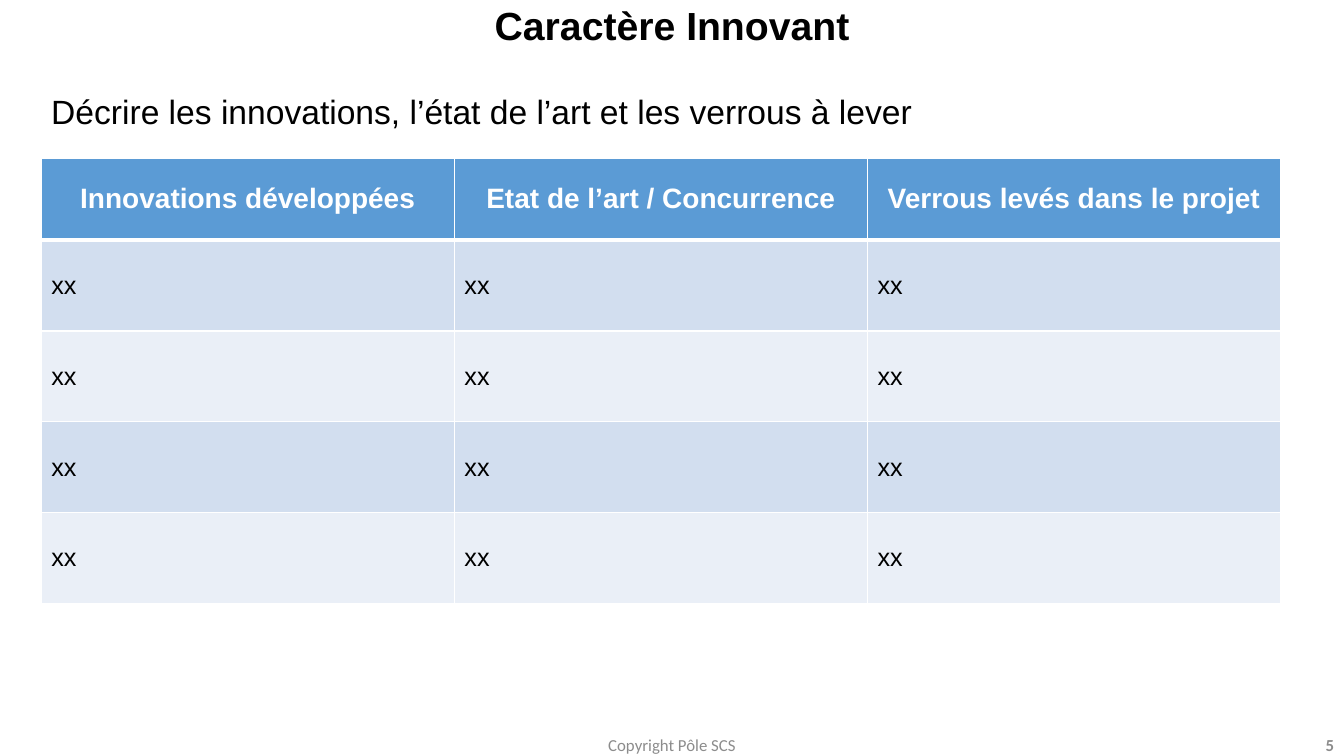
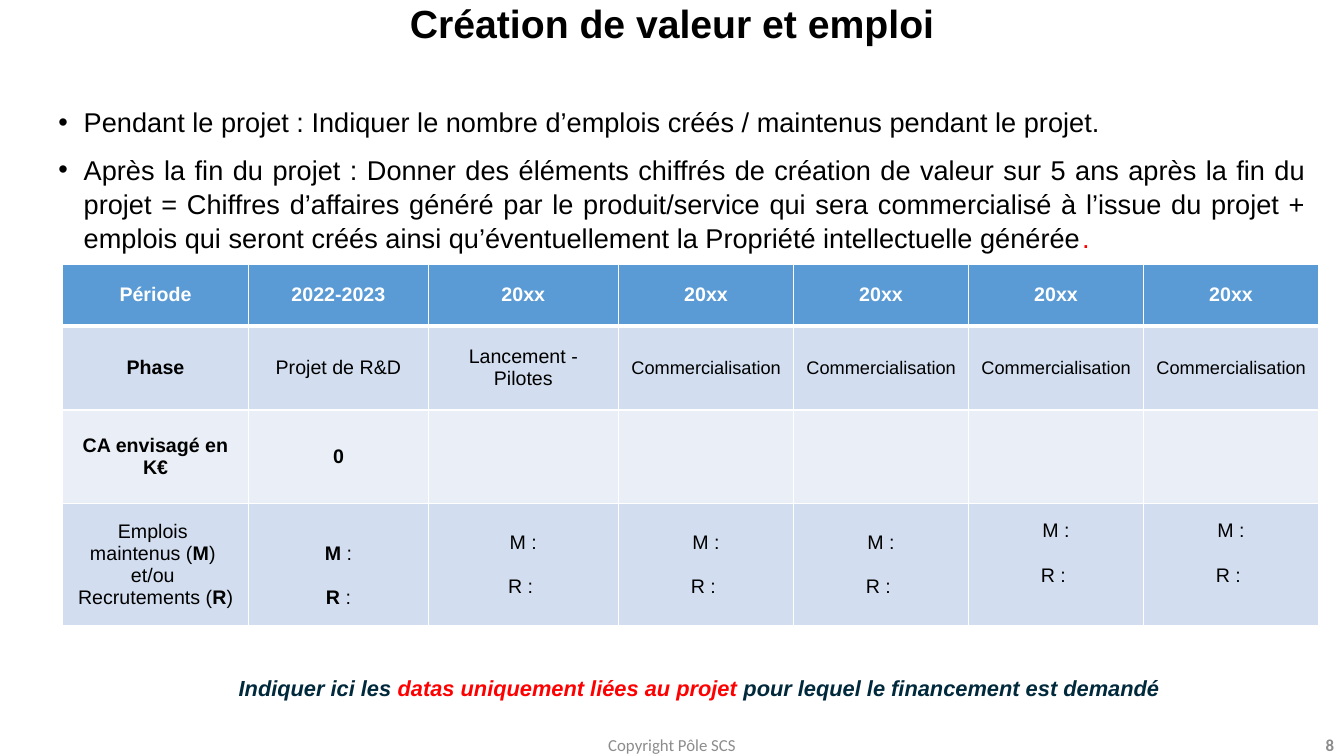
from lxml import etree
from pptx import Presentation
from pptx.dml.color import RGBColor
from pptx.enum.text import MSO_ANCHOR, PP_ALIGN
from pptx.oxml.ns import qn
from pptx.util import Cm, Pt

LEFT, CENTER, RIGHT, JUSTIFY = PP_ALIGN.LEFT, PP_ALIGN.CENTER, PP_ALIGN.RIGHT, PP_ALIGN.JUSTIFY
TOP, MIDDLE = MSO_ANCHOR.TOP, MSO_ANCHOR.MIDDLE

BLACK = RGBColor(0x00, 0x00, 0x00)
WHITE = RGBColor(0xFF, 0xFF, 0xFF)
GREY = RGBColor(0x8C, 0x8C, 0x8C)
RED = RGBColor(0xFF, 0x00, 0x00)
NAVY = RGBColor(0x00, 0x29, 0x3C)
HEADER_BLUE = RGBColor(0x5B, 0x9B, 0xD5)
BANDS = [RGBColor(0xD2, 0xDE, 0xEF), RGBColor(0xEA, 0xEF, 0xF7)]

SLIDE_WIDTH, SLIDE_HEIGHT = Cm(33.87), Cm(19.05)
FOOTER_TOP, FOOTER_HEIGHT = Cm(18.57), Cm(0.41)
TITLE_HEIGHT = Cm(1.6)
BULLET_INDENT = Cm(0.64)

BODY = {"name": "Arial", "size": Pt(18), "bold": False, "color": BLACK}
TITLE = BODY | {"size": Pt(28), "bold": True}
LEAD = BODY | {"size": Pt(24)}
BULLET = BODY | {"size": Pt(19.4)}
NOTE = BODY | {"size": Pt(15.6), "bold": True, "italic": True, "color": NAVY}
FOOTER = {"name": "Calibri", "size": Pt(12), "bold": False, "color": GREY}
HEADER = BODY | {"size": Pt(20), "bold": True, "color": WHITE}
SMALL = BODY | {"size": Pt(14)}
SMALL_HEADER = HEADER | {"size": Pt(14)}
BOLD = {"bold": True}
ACCENT = {"color": RED}


def add_span(para, text, values):
    """Add one run of text and format its font."""
    span = para.add_run()
    span.text = text
    for name, value in values.items():
        if name == "color":
            span.font.color.rgb = value
        else:
            setattr(span.font, name, value)


def fill_text(frame, paragraphs, values, align=LEFT, gap=0, line=None):
    """Write paragraphs, each a string or a list of (text, overrides) pairs."""
    for index, spans in enumerate(paragraphs):
        para = frame.add_paragraph() if index else frame.paragraphs[0]
        para.alignment = align
        para.space_before = Pt(gap if index else 0)
        if line:
            para.line_spacing = line
        if isinstance(spans, str):
            spans = [(spans, {})]
        for text, overrides in spans:
            add_span(para, text, values | overrides)


def add_text(slide, place, paragraphs, values, anchor=TOP, **layout):
    """Add a wrapping text box and return its text frame."""
    frame = slide.shapes.add_textbox(*place).text_frame
    frame.word_wrap = True
    frame.vertical_anchor = anchor
    fill_text(frame, paragraphs, values, **layout)
    return frame


def add_bullets(frame):
    """Give every paragraph a round bullet and a hanging indent."""
    for para in frame.paragraphs:
        properties = para._p.get_or_add_pPr()
        properties.set("marL", str(BULLET_INDENT))
        properties.set("indent", str(-BULLET_INDENT))
        etree.SubElement(properties, qn("a:buFont")).set("typeface", "Arial")
        etree.SubElement(properties, qn("a:buChar")).set("char", "•")


def set_borders(cell, row):
    """Draw white borders, thicker between the header and the body."""
    widths = {"L": 1, "R": 1, "T": 3 if row == 1 else 1, "B": 3 if row == 0 else 1}
    properties = cell._tc.get_or_add_tcPr()
    for side, width in widths.items():
        line = etree.SubElement(properties, qn(f"a:ln{side}"), w=str(Pt(width)))
        fill = etree.SubElement(line, qn("a:solidFill"))
        etree.SubElement(fill, qn("a:srgbClr"), val=str(WHITE))


def add_table(slide, left, top, widths, heights, rows, header, body, body_align, gap=0):
    """Add a banded table whose cells are lists of paragraphs."""
    frame = slide.shapes.add_table(
        len(rows), len(widths), left, top, Cm(sum(widths)), Cm(sum(heights)))
    table = frame.table
    for column, width in zip(table.columns, widths):
        column.width = Cm(width)
    for index, (height, contents) in enumerate(zip(heights, rows)):
        table.rows[index].height = Cm(height)
        for cell, paragraphs in zip(table.rows[index].cells, contents):
            set_borders(cell, index)
            cell.fill.solid()
            cell.fill.fore_color.rgb = BANDS[(index - 1) % 2] if index else HEADER_BLUE
            cell.vertical_anchor = MIDDLE
            fill_text(cell.text_frame, paragraphs, body if index else header,
                      align=body_align if index else CENTER,
                      gap=gap if len(paragraphs) == 2 else 0)
    return table


def add_slide(deck, title, number, title_top):
    """Add a slide with its title, copyright line and page number."""
    slide = deck.slides.add_slide(deck.slide_layouts[5])
    box = slide.shapes.title
    box.left, box.top, box.width, box.height = 0, title_top, SLIDE_WIDTH, TITLE_HEIGHT
    box.text_frame.vertical_anchor = TOP
    fill_text(box.text_frame, [title], TITLE, align=CENTER, line=0.9)
    width = Cm(11.43)
    add_text(slide, ((SLIDE_WIDTH - width) // 2, FOOTER_TOP, width, FOOTER_HEIGHT),
             ["Copyright Pôle SCS"], FOOTER, MIDDLE, align=CENTER)
    width = Cm(7.62)
    add_text(slide, (SLIDE_WIDTH - width, FOOTER_TOP, width, FOOTER_HEIGHT),
             [number], FOOTER | BOLD, MIDDLE, align=RIGHT)
    return slide


def add_innovation_slide(deck):
    """Build the slide on innovations, state of the art and obstacles."""
    slide = add_slide(deck, "Caractère Innovant", "5", Cm(0.05))
    left = Cm(1.04)
    add_text(slide, (left, Cm(2.16), Cm(31.24), Cm(1.27)),
             ["Décrire les innovations, l’état de l’art et les verrous à lever"], LEAD)
    headings = [["Innovations développées"], ["Etat de l’art / Concurrence"],
                ["Verrous levés dans le projet"]]
    add_table(slide, left, Cm(3.99), [10.41] * 3, [2.06] + [2.29] * 4,
              [headings] + [[["xx"]] * 3] * 4, HEADER, BODY, LEFT)


def add_value_slide(deck):
    """Build the slide on value creation and jobs."""
    slide = add_slide(deck, "Création de valeur et emploi", "8", 0)
    after_project = (
        "Après la fin du projet : Donner des éléments chiffrés de création de valeur "
        "sur 5 ans après la fin du projet = Chiffres d’affaires généré par le "
        "produit/service qui sera commercialisé à l’issue du projet + emplois qui seront "
        "créés ainsi qu’éventuellement la Propriété intellectuelle générée")
    frame = add_text(
        slide, (Cm(1.22), Cm(2.5), Cm(31.98), Cm(3.94)),
        ["Pendant le projet : Indiquer le nombre d’emplois créés / maintenus pendant le projet.",
         [(after_project, {}), (".", ACCENT)]],
        BULLET, align=JUSTIFY, gap=10, line=1.04)
    add_bullets(frame)

    jobs = ["Emplois ",
            [("maintenus (", {}), ("M", BOLD), (") ", {})],
            "et/ou ",
            [("Recrutements (", {}), ("R", BOLD), (")", {})]]
    project_jobs = [[(letter, BOLD), (" :", {})] for letter in "MR"]
    rows = [
        [["Période"], ["2022-2023"]] + [["20xx"]] * 5,
        [[[("Phase", BOLD)]], ["Projet de R&D"], ["Lancement - Pilotes"]]
        + [[[("Commercialisation", {"size": Pt(13)})]]] * 4,
        [[[("CA envisagé en K€", BOLD)]], [[("0", BOLD)]]] + [[]] * 5,
        [jobs, project_jobs] + [["M :", "R : "]] * 5,
    ]
    table = add_table(slide, Cm(1.57), Cm(6.65), [4.7, 4.52, 4.8] + [4.41] * 4,
                      [1.57, 2.11, 2.36, 3.07], rows, SMALL_HEADER, SMALL, CENTER, gap=16)
    table.cell(3, 1).margin_top = Cm(0.69)
    for column in (5, 6):
        table.cell(3, column).margin_bottom = Cm(0.69)

    add_text(slide, (Cm(1.47), Cm(16.56), Cm(32.3), Cm(1.52)),
             [[("Indiquer ici les ", {}), ("datas uniquement liées au projet ", ACCENT),
               ("pour lequel le financement est demandé", {})]],
             NOTE, MIDDLE, align=CENTER)


def main():
    """Build the deck and save it."""
    deck = Presentation()
    deck.slide_width, deck.slide_height = SLIDE_WIDTH, SLIDE_HEIGHT
    add_innovation_slide(deck)
    add_value_slide(deck)
    deck.save("out.pptx")


if __name__ == "__main__":
    main()
